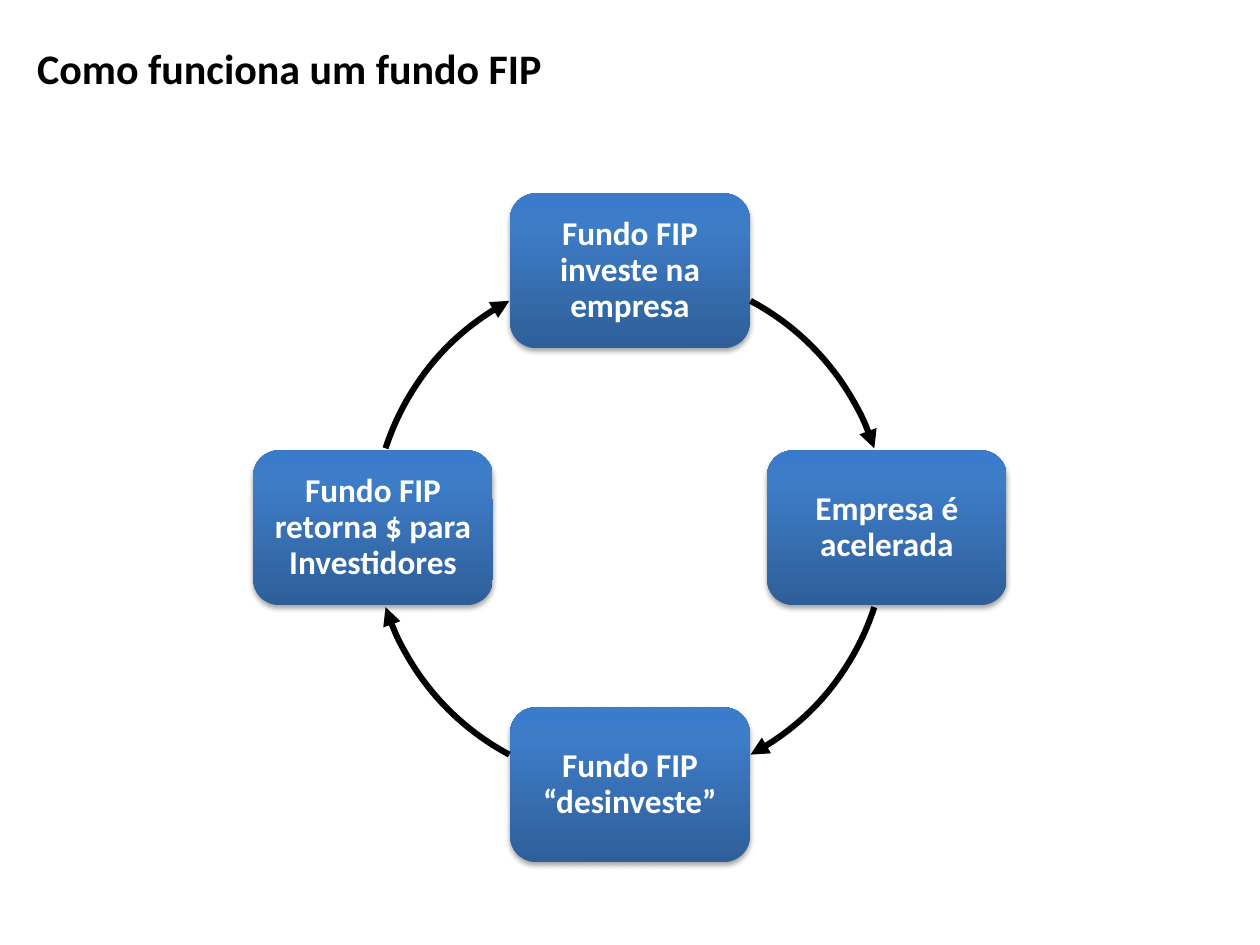
from copy import deepcopy
from math import cos, radians, sin

from lxml import etree
from pptx import Presentation
from pptx import util as u
from pptx.dml import color
from pptx.enum import shapes, text
from pptx.oxml import ns

MID_X, MID_Y, RADIUS = 12.7, 10.64, 5.18
CARD_W, CARD_H = 4.83, 3.12
STEPS = [
    ("Fundo FIP investe na empresa", 298, 342),
    ("Empresa é acelerada", 18, 62),
    ("Fundo FIP “desinveste”", 118, 162),
    ("Fundo FIP retorna $ para Investidores", 198, 242),
]


def tint(code):
    return color.RGBColor.from_string(code)


def add(node, tag, **attrs):
    return etree.SubElement(node, ns.qn(tag), attrs)


class Deck:
    font = "Calibri"
    ink = "000000"
    paper = "FFFFFF"
    blend = [(0, "2F5F99"), (0.8, "3D7CC7"), (1, "3A7CCB")]

    def __init__(self):
        self.show = Presentation()
        self.show.slide_width = u.Cm(25.4)
        self.show.slide_height = u.Cm(19.05)
        self.slide = self.show.slides.add_slide(self.show.slide_layouts[6])

    def label(self, frame, words, size, code):
        frame.word_wrap = True
        frame.text = words
        line = frame.paragraphs[0]
        for run in line.runs:
            run.font.name = self.font
            run.font.size = u.Pt(size)
            run.font.bold = True
            run.font.color.rgb = tint(code)
        return line

    def shape(self, kind, x, y, w, h):
        item = self.slide.shapes.add_shape(
            kind, u.Cm(x - w / 2), u.Cm(y - h / 2), u.Cm(w), u.Cm(h))
        item.shadow.inherit = False
        return item

    def title(self, words, x, y, w, h):
        box = self.slide.shapes.add_textbox(u.Cm(x), u.Cm(y), u.Cm(w), u.Cm(h))
        self.label(box.text_frame, words, 24, self.ink)

    def shade(self, item):
        item.fill.gradient()
        item.fill.gradient_angle = 90
        stops = item._element.spPr.find(ns.qn("a:gradFill")).find(ns.qn("a:gsLst"))
        stops.append(deepcopy(stops[-1]))
        for stop, (place, code) in zip(item.fill.gradient_stops, self.blend):
            stop.position = place
            stop.color.rgb = tint(code)

    def drop(self, item):
        effects = item._element.spPr.find(ns.qn("a:effectLst"))
        cast = add(effects, "a:outerShdw", blurRad=str(u.Pt(3.1)),
                   dist=str(u.Pt(1.8)), dir="5400000", rotWithShape="0")
        hue = add(cast, "a:srgbClr", val=self.ink)
        add(hue, "a:alpha", val="35000")

    def card(self, words, x, y):
        item = self.shape(shapes.MSO_SHAPE.ROUNDED_RECTANGLE, x, y, CARD_W, CARD_H)
        self.shade(item)
        item.line.fill.background()
        self.drop(item)
        frame = item.text_frame
        frame.margin_left = frame.margin_right = u.Cm(0.2)
        frame.margin_top = frame.margin_bottom = u.Cm(0.2)
        frame.vertical_anchor = text.MSO_ANCHOR.MIDDLE
        line = self.label(frame, words, 19, self.paper)
        line.alignment = text.PP_ALIGN.CENTER
        line.line_spacing = 0.9

    def arc(self, start, end):
        item = self.shape(shapes.MSO_SHAPE.ARC, MID_X, MID_Y, 2 * RADIUS, 2 * RADIUS)
        item.adjustments[0] = start * 0.6
        item.adjustments[1] = end * 0.6
        item.fill.background()
        item.line.color.rgb = tint(self.ink)
        item.line.width = u.Pt(3.5)
        add(item._element.spPr.find(ns.qn("a:ln")), "a:tailEnd", type="triangle")


def main():
    deck = Deck()
    for i, (words, start, end) in enumerate(STEPS):
        turn = radians(90 * i - 90)
        deck.card(words, MID_X + RADIUS * cos(turn), MID_Y + RADIUS * sin(turn))
        deck.arc(start, end)
    deck.title("Como funciona um fundo FIP", 0.5, 0.74, 17.6, 1.28)
    deck.show.save("out.pptx")


if __name__ == "__main__":
    main()
